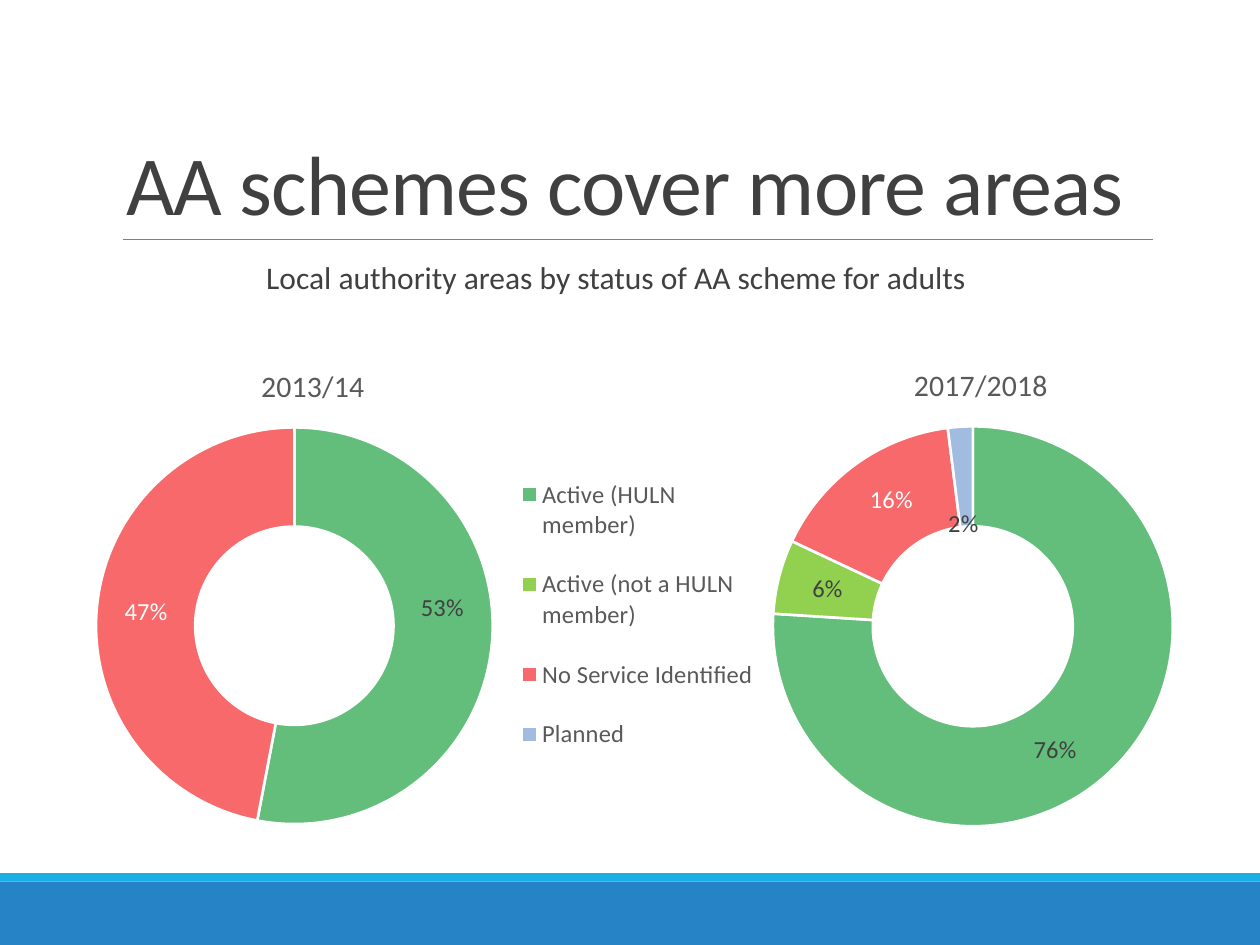
import pptx
import pptx.chart.data
import pptx.dml.color
import pptx.enum.chart
import pptx.enum.shapes
import pptx.enum.text
import pptx.oxml
import pptx.oxml.ns
import pptx.util

FONT = "Calibri"
HUES = {
    "text": "404040", "soft": "595959", "rule": "808080", "white": "FFFFFF",
    "band": "2683C6", "strip": "1CADE4", "green": "63BE7B",
    "lime": "92D050", "red": "F8696B", "blue": "A1BCDF",
}
CATS = ["Active (HULN member)", "Active (not a HULN member)",
        "No Service Identified", "Planned"]
SLICES = ["green", "lime", "red", "blue"]
NS = pptx.oxml.ns.nsdecls("c")
WIDE, HIGH = pptx.util.Inches(10), pptx.util.Inches(7.5)


def hue(name):
    return pptx.dml.color.RGBColor.from_string(HUES[name])


def scale(box):
    """Turn shares of the slide into lengths."""
    x, y, w, h = box
    return int(x * WIDE), int(y * HIGH), int(w * WIDE), int(h * HIGH)


def style(font, size, name):
    font.name, font.size = FONT, pptx.util.Pt(size)
    font.bold = False
    font.color.rgb = hue(name)


def write(par, text, size, name):
    run = par.add_run()
    run.text = text
    style(run.font, size, name)
    return run


def place(node, spot, index=1, inner=False, edge=True):
    """Lay out a chart part in shares of the chart, from its edge or as a shift."""
    for old in node.findall(pptx.oxml.ns.qn("c:layout")):
        node.remove(old)
    tags = '<c:layoutTarget val="inner"/>' if inner else ""
    if edge:
        tags += '<c:xMode val="edge"/><c:yMode val="edge"/>'
    tags += "".join(f'<c:{key} val="{val}"/>' for key, val in zip("xywh", spot))
    node.insert(index, pptx.oxml.parse_xml(
        f"<c:layout {NS}><c:manualLayout>{tags}</c:manualLayout></c:layout>"))


def add_bar(slide, box, name):
    bar = slide.shapes.add_shape(
        pptx.enum.shapes.MSO_SHAPE.RECTANGLE, *scale(box))
    bar.shadow.inherit = False
    bar.fill.solid()
    bar.fill.fore_color.rgb = hue(name)
    bar.line.fill.background()


def add_rule(slide, left, right, top):
    rule = slide.shapes.add_connector(
        pptx.enum.shapes.MSO_CONNECTOR.STRAIGHT,
        int(left * WIDE), int(top * HIGH), int(right * WIDE), int(top * HIGH))
    rule.line.color.rgb = hue("rule")
    rule.line.width = pptx.util.Pt(0.5)
    rule._element.spPr.append(pptx.oxml.parse_xml(
        f'<a:effectLst {pptx.oxml.ns.nsdecls("a")}/>'))


def add_title(slide, box, text):
    title = slide.shapes.title
    title.left, title.top, title.width, title.height = scale(box)
    frame = title.text_frame
    frame.vertical_anchor = pptx.enum.text.MSO_ANCHOR.BOTTOM
    par = frame.paragraphs[0]
    par.alignment = pptx.enum.text.PP_ALIGN.JUSTIFY
    par.line_spacing = 0.85
    run = write(par, text, 48, "text")
    run.font._element.set("spc", "-50")


def add_note(slide, box, text):
    frame = slide.shapes.add_textbox(*scale(box)).text_frame
    frame.word_wrap = True
    par = frame.paragraphs[0]
    par.alignment = pptx.enum.text.PP_ALIGN.CENTER
    write(par, text, 18, "text")


def add_ring(slide, box, title, vals, plot, head, shifts, key=None):
    """Draw a doughnut; shifts moves value labels, key places a legend."""
    data = pptx.chart.data.CategoryChartData(number_format="0%")
    data.categories = CATS
    data.add_series("Series 1", vals)
    chart = slide.shapes.add_chart(
        pptx.enum.chart.XL_CHART_TYPE.DOUGHNUT, *scale(box), data).chart
    style(chart.font, 14, "text")

    chart.has_title = True
    write(chart.chart_title.text_frame.paragraphs[0], title, 17, "soft")
    place(chart.chart_title._element, head)
    place(chart._chartSpace.chart.plotArea, plot, 0, inner=True)

    chart.has_legend = key is not None
    if key:
        legend = chart.legend
        legend.position = pptx.enum.chart.XL_LEGEND_POSITION.BOTTOM
        legend.include_in_layout = False
        style(legend.font, 14, "soft")
        place(legend._element, key)

    ring = chart.plots[0]
    ring.vary_by_categories = True
    ring._element.find(pptx.oxml.ns.qn("c:holeSize")).set("val", "75")
    ring.has_data_labels = True
    labels = ring.data_labels
    labels.show_value, labels.show_percentage = True, False
    labels.number_format = "0%;;"
    labels.number_format_is_linked = False
    style(labels.font, 14, "text")
    for num, name in enumerate(SLICES):
        point = ring.series[0].points[num]
        point.format.fill.solid()
        point.format.fill.fore_color.rgb = hue(name)
        point.format.line.color.rgb = hue("white")
        point.format.line.width = pptx.util.Pt(1.5)
        style(point.data_label.font, 14, "white" if name == "red" else "text")
        label = point.data_label._dLbl
        label.insert(1, pptx.oxml.parse_xml(
            f'<c:numFmt {NS} formatCode="0%;;" sourceLinked="0"/>'))
        if num in shifts:
            place(label, shifts[num], edge=False)


def main():
    deck = pptx.Presentation()
    deck.slide_width, deck.slide_height = WIDE, HIGH
    slide = deck.slides.add_slide(deck.slide_layouts[5])
    add_bar(slide, (0, 0.933, 1, 0.067), "band")
    add_bar(slide, (0, 0.924, 1, 0.009), "strip")
    add_rule(slide, 0.098, 0.915, 0.253)
    add_title(slide, (0.09, 0.041, 0.825, 0.212), "AA schemes cover more areas")
    add_ring(slide, (0.057, 0.336, 0.384, 0.553), "2013/14",
             (0.53, 0, 0.47, 0), (0.05, 0.21, 0.82, 0.76), (0.38, 0.08),
             {0: (0, -0.06)})
    add_ring(slide, (0.409, 0.375, 0.538, 0.505), "2017/2018",
             (0.76, 0.06, 0.16, 0.02), (0.38, 0.15, 0.59, 0.84), (0.58, 0.01),
             {0: (-0.03, 0.03), 2: (0.01, -0.01), 3: (0, 0.1)},
             key=(0, 0.2, 0.36, 0.69))
    add_note(slide, (0.081, 0.267, 0.816, 0.095),
             "Local authority areas by status of AA scheme for adults")
    deck.save("out.pptx")


if __name__ == "__main__":
    main()
